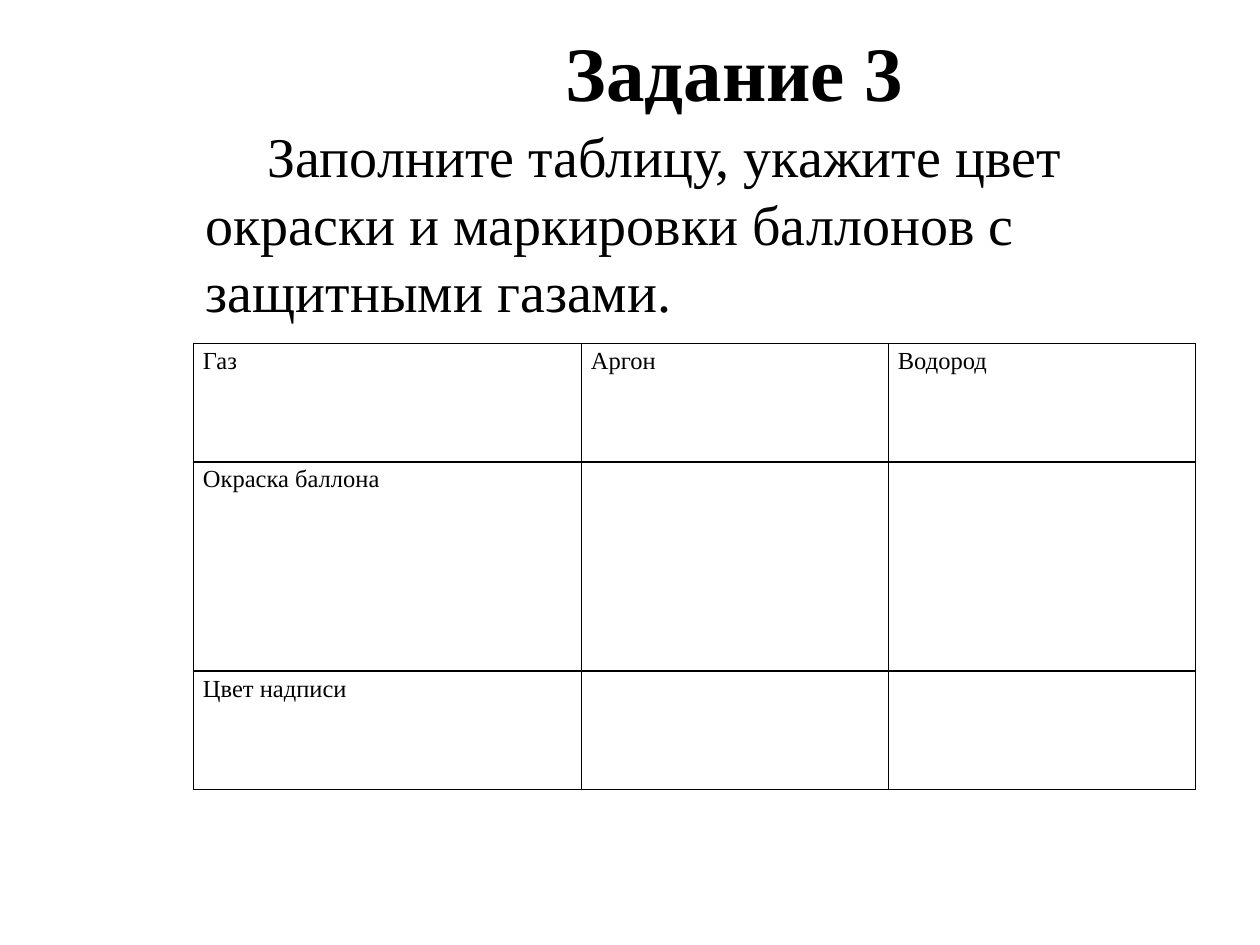
from lxml import etree
from pptx import Presentation
from pptx import util as u
from pptx.dml.color import RGBColor
from pptx.enum import text
from pptx.oxml.ns import qn

FONT = "Times New Roman"
BLACK = "000000"
WHITE = "FFFFFF"
BORDER_WIDTH = u.Pt(1)

TASK = ("Заполните таблицу, укажите цвет окраски и маркировки "
        "баллонов с защитными газами.")
GAS_ROWS = [
    ("Газ", "Аргон", "Водород"),
    ("Окраска баллона", "", ""),
    ("Цвет надписи", "", ""),
]
COLUMN_WIDTHS = [7.82, 6.19, 6.19]
ROW_HEIGHTS = [2.39, 4.22, 2.39]


def color(hex_code):
    return RGBColor.from_string(hex_code)


def style_paragraph(paragraph, size, bold=False):
    for run in paragraph.runs:
        run.font.name = FONT
        run.font.size = u.Pt(size)
        run.font.bold = bold
        run.font.color.rgb = color(BLACK)


def add_heading(slide, wording):
    heading = slide.shapes.title
    heading.left, heading.top = u.Cm(4.9), u.Cm(0.76)
    heading.width, heading.height = u.Cm(19.81), u.Cm(3.18)
    # Nearly opaque white panel
    heading.fill.solid()
    heading.fill.fore_color.rgb = color(WHITE)
    panel_color = heading._element.spPr.find(qn("a:solidFill"))[0]
    etree.SubElement(panel_color, qn("a:alpha"), val="90000")
    heading.line.color.rgb = color(WHITE)
    heading.line.width = u.Pt(1.5)

    frame = heading.text_frame
    frame.text = wording
    frame.auto_size = text.MSO_AUTO_SIZE.NONE
    frame.vertical_anchor = text.MSO_ANCHOR.TOP
    frame.margin_top = 0
    paragraph = frame.paragraphs[0]
    paragraph.alignment = text.PP_ALIGN.CENTER
    paragraph.line_spacing = 0.87
    style_paragraph(paragraph, 44, bold=True)


def add_task(slide, wording):
    task = slide.shapes.add_textbox(u.Cm(3.9), u.Cm(2.29), u.Cm(18.39), u.Cm(5.74))
    frame = task.text_frame
    frame.word_wrap = True
    frame.vertical_anchor = text.MSO_ANCHOR.TOP
    frame.margin_top = u.Cm(0.16)
    frame.text = wording
    paragraph = frame.paragraphs[0]
    paragraph.line_spacing = u.Pt(38.5)
    # First-line indent
    properties = paragraph._p.get_or_add_pPr()
    properties.set("marL", "0")
    properties.set("indent", str(u.Cm(1.25)))
    style_paragraph(paragraph, 32)


def add_borders(cell):
    properties = cell._tc.get_or_add_tcPr()
    for side in ("lnL", "lnR", "lnT", "lnB"):
        line = etree.SubElement(properties, qn(f"a:{side}"), w=str(BORDER_WIDTH))
        fill = etree.SubElement(line, qn("a:solidFill"))
        etree.SubElement(fill, qn("a:srgbClr"), val=BLACK)


def fill_cell(cell, wording):
    cell.margin_left = cell.margin_right = u.Cm(0.19)
    cell.margin_top = cell.margin_bottom = 0
    add_borders(cell)
    cell.fill.background()
    if wording:
        cell.text = wording
        paragraph = cell.text_frame.paragraphs[0]
        paragraph.line_spacing = 1.15
        paragraph.space_after = u.Pt(10)
        style_paragraph(paragraph, 14)


def add_gas_table(slide):
    table = slide.shapes.add_table(
        len(GAS_ROWS), len(COLUMN_WIDTHS), u.Cm(3.9), u.Cm(6.92),
        u.Cm(sum(COLUMN_WIDTHS)), u.Cm(sum(ROW_HEIGHTS))).table
    table.first_row = table.horz_banding = False
    for column, width in zip(table.columns, COLUMN_WIDTHS):
        column.width = u.Cm(width)
    for row, height, wordings in zip(table.rows, ROW_HEIGHTS, GAS_ROWS):
        row.height = u.Cm(height)
        for cell, wording in zip(row.cells, wordings):
            fill_cell(cell, wording)


def main():
    deck = Presentation()
    deck.slide_width, deck.slide_height = u.Cm(25.4), u.Cm(19.05)
    slide = deck.slides.add_slide(deck.slide_layouts[5])  # title only
    add_heading(slide, "Задание 3")
    add_gas_table(slide)
    add_task(slide, TASK)
    deck.save("out.pptx")


if __name__ == "__main__":
    main()
